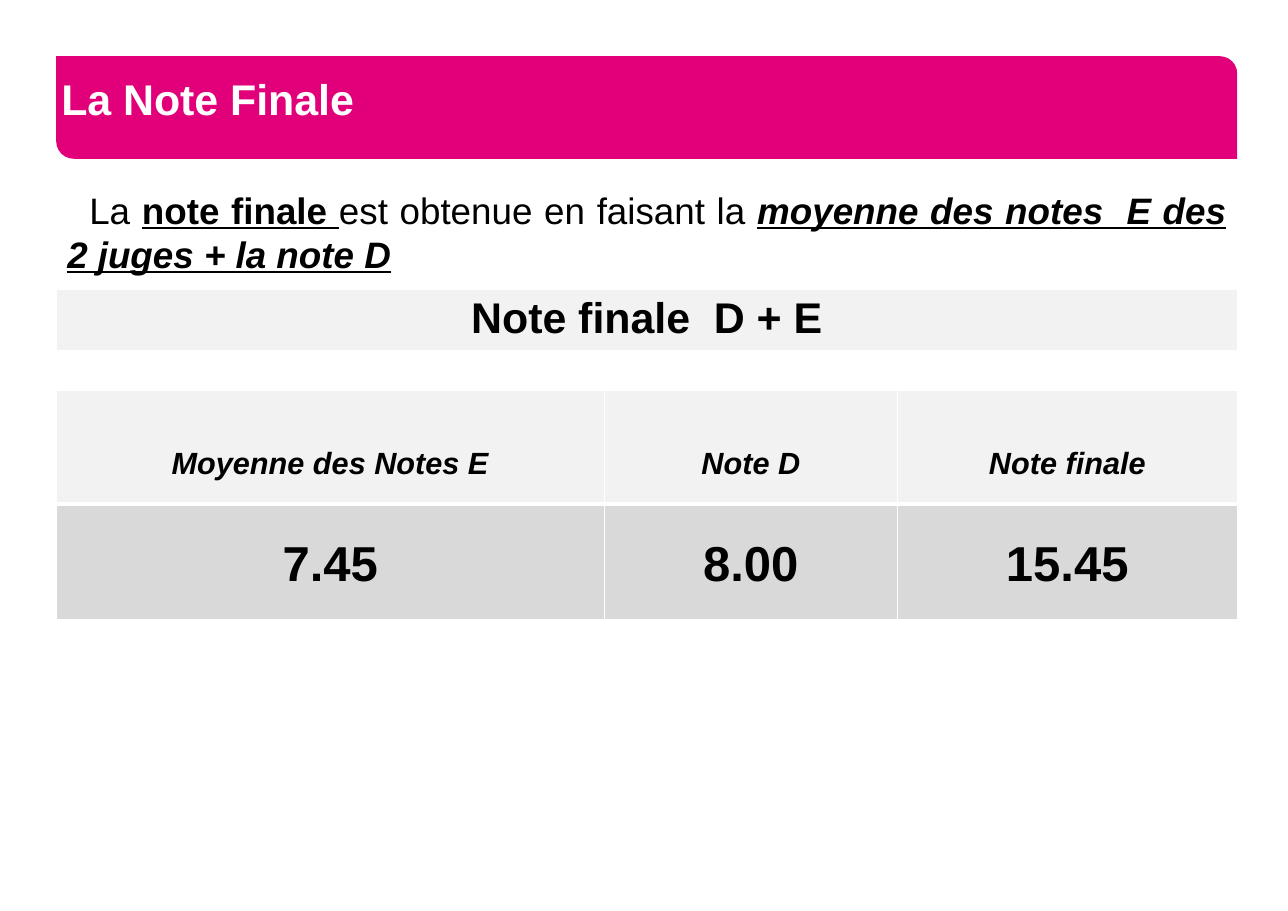
"""Slide explaining how the final score is worked out."""
from dataclasses import dataclass

from lxml import etree
from pptx import Presentation
from pptx.dml.color import RGBColor
from pptx.enum.shapes import MSO_SHAPE
from pptx.enum.text import MSO_ANCHOR, PP_ALIGN
from pptx.oxml.ns import qn
from pptx.util import Inches, Pt

DIAGONAL = MSO_SHAPE.ROUND_2_DIAG_RECTANGLE
MIDDLE, TOP = MSO_ANCHOR.MIDDLE, MSO_ANCHOR.TOP
LEFT, CENTER, JUSTIFY = PP_ALIGN.LEFT, PP_ALIGN.CENTER, PP_ALIGN.JUSTIFY

PINK = RGBColor(0xE2, 0x00, 0x7A)
WHITE = RGBColor(0xFF, 0xFF, 0xFF)
BLACK = RGBColor(0x00, 0x00, 0x00)
PALE = RGBColor(0xF2, 0xF2, 0xF2)
GREY = RGBColor(0xD9, 0xD9, 0xD9)

FONT = "Arial"
MARGIN = 0.51
WIDTH = 10.71
INSET = 0.05


@dataclass(frozen=True)
class Style:
    size: int
    bold: bool = True
    italic: bool = False
    underline: bool = False
    color: RGBColor = BLACK


@dataclass(frozen=True)
class Row:
    texts: tuple[str, ...]
    height: float
    style: Style
    fill: RGBColor
    spacing: float = 1.0
    border_top: int = 1
    border_bottom: int = 3


PLAIN = Style(24, bold=False)
TERM = Style(24, underline=True)
RULE = Style(24, italic=True, underline=True)
TITLE = Style(28, color=WHITE)

SENTENCE = (
    ("La ", PLAIN),
    ("note finale ", TERM),
    ("est obtenue en faisant la ", PLAIN),
    ("moyenne des notes  E des 2 juges + la note D", RULE),
)
FORMULA = (Row(("Note finale  D + E",), 0.47, Style(28), PALE),)
SCORES = (
    Row(("Moyenne des Notes E", "Note D", "Note finale"), 1.03,
        Style(20, italic=True), PALE, spacing=2.5),
    Row(("7.45", "8.00", "15.45"), 1.05, Style(32), GREY, spacing=1.5,
        border_top=3, border_bottom=1),
)


def add_run(p, text: str, style: Style) -> None:
    r = p.add_run()
    r.text = text
    r.font.name = FONT
    r.font.size = Pt(style.size)
    r.font.bold = style.bold
    r.font.italic = style.italic
    r.font.underline = style.underline
    r.font.color.rgb = style.color


def set_insets(box) -> None:
    box.margin_left = box.margin_right = Inches(INSET)
    box.margin_top = box.margin_bottom = Inches(INSET)


def add_banner(slide, text: str) -> None:
    sp = slide.shapes.add_shape(DIAGONAL, Inches(MARGIN), Inches(MARGIN),
                                Inches(WIDTH), Inches(0.93))
    sp.shadow.inherit = False
    sp.adjustments[0] = 0
    sp.adjustments[1] = 0.17
    sp.fill.solid()
    sp.fill.fore_color.rgb = PINK
    sp.line.fill.background()
    tf = sp.text_frame
    tf.word_wrap = True
    set_insets(tf)
    tf.margin_left = 0
    tf.vertical_anchor = MIDDLE
    p = tf.paragraphs[0]
    p.alignment = LEFT
    p.line_spacing = Pt(22)
    add_run(p, text, TITLE)


def add_sentence(slide, parts: tuple[tuple[str, Style], ...]) -> None:
    sp = slide.shapes.add_textbox(Inches(0.56), Inches(1.65), Inches(10.61), Inches(0.87))
    tf = sp.text_frame
    tf.word_wrap = True
    set_insets(tf)
    tf.vertical_anchor = TOP
    p = tf.paragraphs[0]
    p.alignment = JUSTIFY
    p._p.get_or_add_pPr().set("indent", str(Inches(0.2)))
    for text, style in parts:
        add_run(p, text, style)


def set_borders(cell, top: int, bottom: int) -> None:
    tc_pr = cell._tc.get_or_add_tcPr()
    for side, width in (("L", 1), ("R", 1), ("T", top), ("B", bottom)):
        ln = etree.SubElement(tc_pr, qn(f"a:ln{side}"), w=str(Pt(width)))
        fill = etree.SubElement(ln, qn("a:solidFill"))
        etree.SubElement(fill, qn("a:srgbClr"), val=str(WHITE))


def add_grid(slide, top: float, widths: tuple[float, ...], rows: tuple[Row, ...]) -> None:
    height = sum(row.height for row in rows)
    table = slide.shapes.add_table(len(rows), len(widths), Inches(MARGIN), Inches(top),
                                   Inches(sum(widths)), Inches(height)).table
    table.first_row = table.horz_banding = False
    for column, width in zip(table.columns, widths):
        column.width = Inches(width)
    for i, row in enumerate(rows):
        table.rows[i].height = Inches(row.height)
        for j, text in enumerate(row.texts):
            cell = table.cell(i, j)
            set_insets(cell)
            set_borders(cell, row.border_top, row.border_bottom)
            cell.fill.solid()
            cell.fill.fore_color.rgb = row.fill
            p = cell.text_frame.paragraphs[0]
            p.alignment = CENTER
            p.line_spacing = row.spacing
            add_run(p, text, row.style)


def main() -> None:
    prs = Presentation()
    prs.slide_width, prs.slide_height = Inches(11.68), Inches(8.26)
    slide = prs.slides.add_slide(prs.slide_layouts[6])
    add_banner(slide, "La Note Finale")
    add_sentence(slide, SENTENCE)
    add_grid(slide, 2.62, (WIDTH,), FORMULA)
    add_grid(slide, 3.54, (4.97, 2.66, 3.08), SCORES)
    prs.save("out.pptx")


if __name__ == "__main__":
    main()
